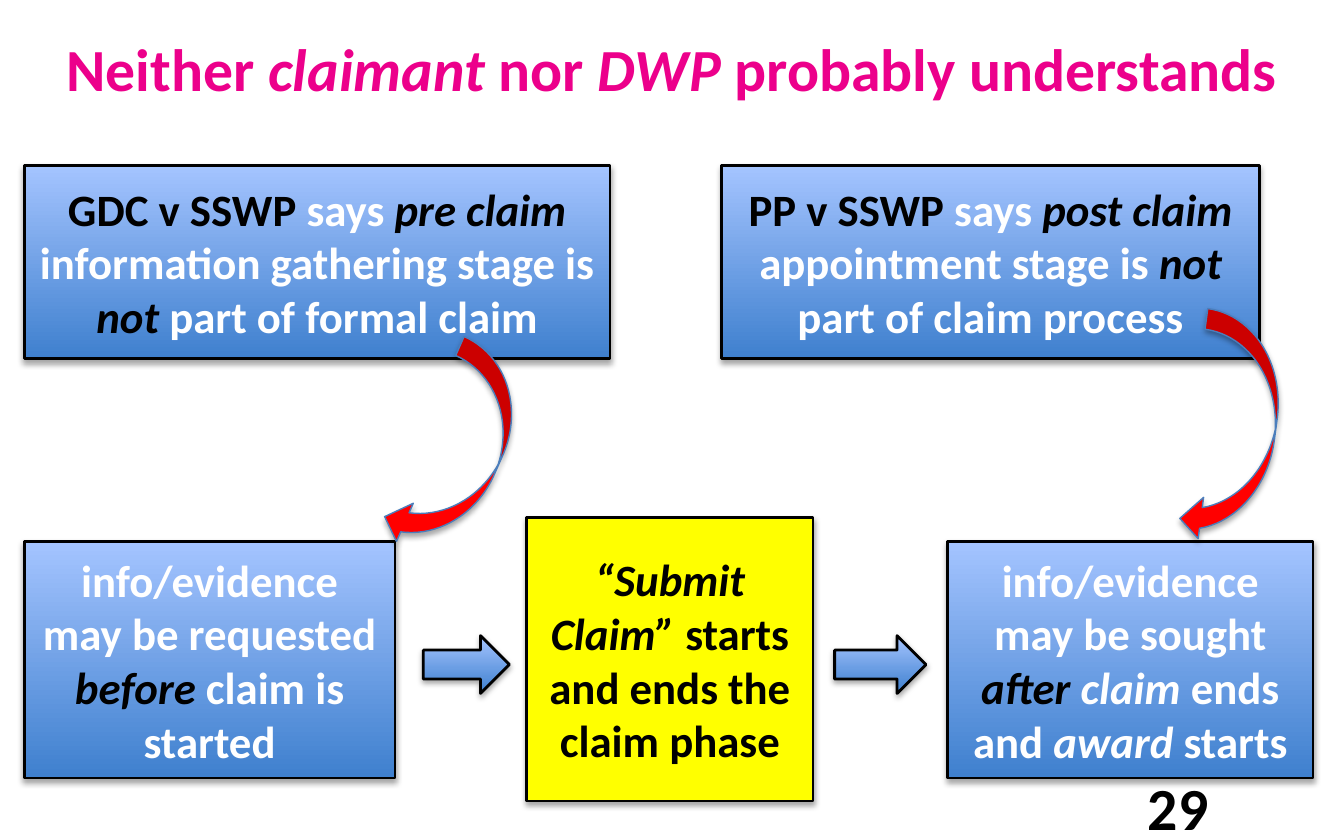
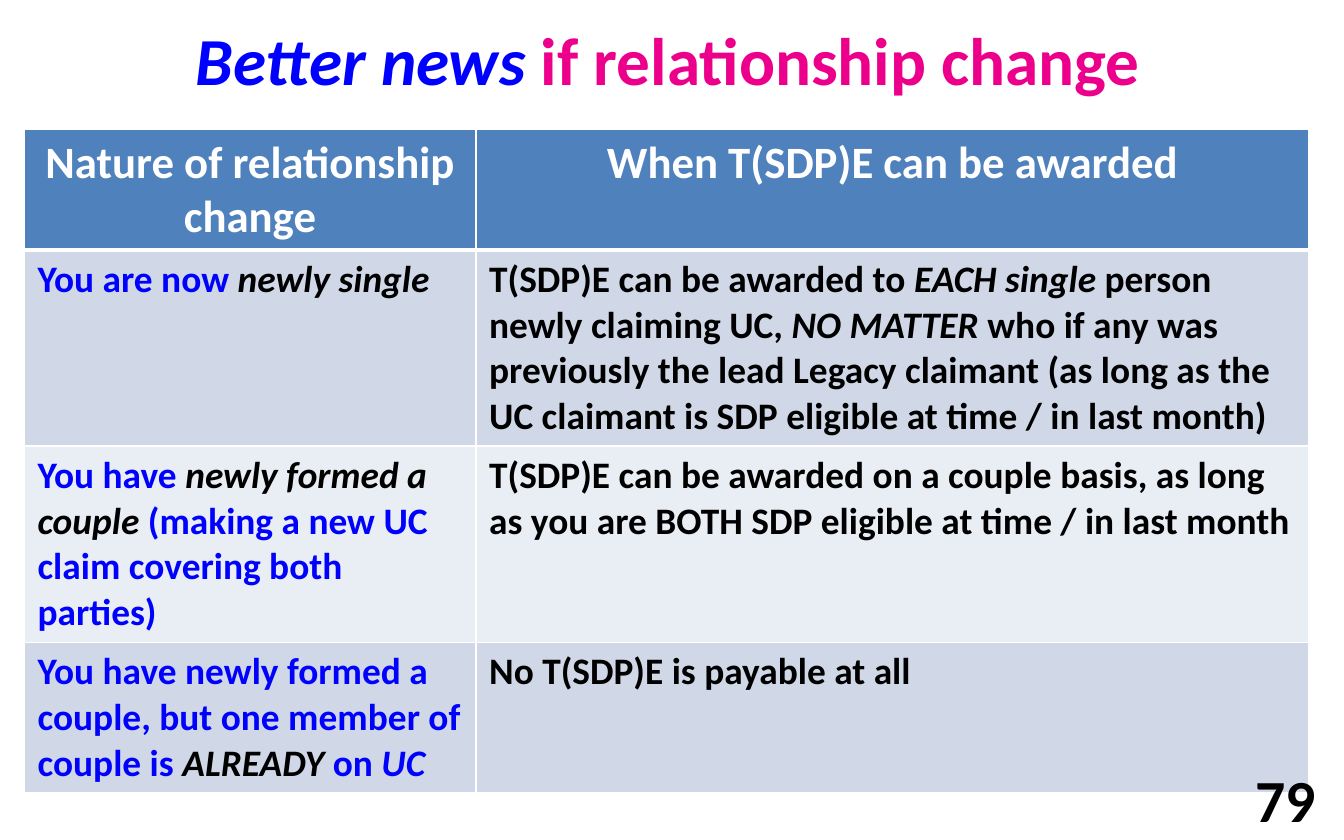
from lxml import etree
from pptx import Presentation
from pptx.dml.color import RGBColor
from pptx.enum.shapes import MSO_SHAPE as Preset
from pptx.enum.text import MSO_ANCHOR as Anchor, PP_ALIGN as Align
from pptx.oxml.ns import qn
from pptx.util import Inches, Pt

COLOURS = {
    "pink": "EC008B",
    "blue": "0000FF",
    "black": "000000",
    "white": "FFFFFF",
    "yellow": "FFFF00",
    "red": "FF0000",
    "arrow edge": "4B7EBC",
    "gradient dark": "3F80CE",
    "gradient light": "A4C4FF",
    "header": "4F81BD",
    "band dark": "D0D8E8",
    "band light": "E9EDF4",
}
FONT = "Calibri"
ITALIC = True


def rgb(name):
    return RGBColor.from_string(COLOURS[name])


def add_colour(parent, name):
    return etree.SubElement(parent, qn("a:srgbClr"), val=COLOURS[name])


class Deck:
    def __init__(self, width, height):
        self.presentation = Presentation()
        self.presentation.slide_width = Inches(width)
        self.presentation.slide_height = Inches(height)
        self.slide = None

    def new_slide(self):
        self.slide = self.presentation.slides.add_slide(self.presentation.slide_layouts[6])

    def fill_text(self, text_frame, paragraphs, size, align=Align.CENTER):
        """Fill a frame with paragraphs, each a list of (text, colour[, italic])."""
        text_frame.word_wrap = True
        for index, runs in enumerate(paragraphs):
            paragraph = text_frame.add_paragraph() if index else text_frame.paragraphs[0]
            paragraph.alignment = align
            for text, colour, *italic in runs:
                run = paragraph.add_run()
                run.text = text
                run.font.name = FONT
                run.font.size = Pt(size)
                run.font.bold = True
                run.font.italic = bool(italic)
                run.font.color.rgb = rgb(colour)

    def text_box(self, place, runs, size, align=Align.CENTER):
        text_frame = self.slide.shapes.add_textbox(*map(Inches, place)).text_frame
        text_frame.vertical_anchor = Anchor.MIDDLE
        self.fill_text(text_frame, [runs], size, align)

    def page_number(self, number, place):
        self.text_box(place, [(str(number), "black")], 32, Align.RIGHT)

    def cast_shadow(self, shape):
        shape.shadow.inherit = False
        effects = shape._element.spPr.find(qn("a:effectLst"))
        shadow = etree.SubElement(
            effects, qn("a:outerShdw"), blurRad=str(Pt(3.1)), dist=str(Pt(1.8)),
            dir="5400000", rotWithShape="0")
        etree.SubElement(add_colour(shadow, "black"), qn("a:alpha"), val="35000")

    def shape(self, preset, place, fill=None, line="black", line_width=1.5, rotation=0):
        """Add a shadowed shape; without a fill colour it gets the blue gradient."""
        shape = self.slide.shapes.add_shape(preset, *map(Inches, place))
        shape.rotation = rotation
        if fill:
            shape.fill.solid()
            shape.fill.fore_color.rgb = rgb(fill)
        else:
            shape.fill.gradient()
            shape.fill.gradient_angle = 90
            for stop, name in zip(shape.fill.gradient_stops, ("gradient dark", "gradient light")):
                stop.color.rgb = rgb(name)
        shape.line.color.rgb = rgb(line)
        shape.line.width = Pt(line_width)
        self.cast_shadow(shape)
        return shape

    def box(self, place, *paragraphs, fill=None):
        text_frame = self.shape(Preset.RECTANGLE, place, fill).text_frame
        text_frame.vertical_anchor = Anchor.MIDDLE
        self.fill_text(text_frame, paragraphs, 24)

    def curved_arrow(self, place, rotation):
        self.shape(Preset.CURVED_LEFT_ARROW, place, "red", "arrow edge", 0.75, rotation)

    def cell_borders(self, cell, top, bottom):
        properties = cell._tc.get_or_add_tcPr()
        for side, width in (("L", 1), ("R", 1), ("T", top), ("B", bottom)):
            line = etree.SubElement(properties, qn("a:ln" + side), w=str(Pt(width)))
            add_colour(etree.SubElement(line, qn("a:solidFill")), "white")

    def table(self, left, top, widths, heights, rows):
        place = map(Inches, (left, top, sum(widths), sum(heights)))
        table = self.slide.shapes.add_table(len(rows), len(widths), *place).table
        for column, width in zip(table.columns, widths):
            column.width = Inches(width)
        for index, (row, height, contents) in enumerate(zip(table.rows, heights, rows)):
            row.height = Inches(height)
            header = index == 0
            fill = "header" if header else "band dark" if index % 2 else "band light"
            for cell, runs in zip(row.cells, contents):
                self.cell_borders(cell, 3 if index == 1 else 1, 3 if header else 1)
                cell.fill.solid()
                cell.fill.fore_color.rgb = rgb(fill)
                self.fill_text(cell.text_frame, [runs], 24 if header else 20,
                               Align.CENTER if header else Align.LEFT)


def claim_stages(deck):
    deck.new_slide()
    deck.text_box((0, 0.18, 10, 0.65), [
        ("Neither ", "pink"), ("claimant", "pink", ITALIC), (" nor ", "pink"),
        ("DWP", "pink", ITALIC), (" probably understands", "pink")], 32)
    deck.page_number(29, (6.76, 5.79, 2.33, 0.43))

    stage_top, stage_height = 4.03, 1.76
    deck.box((0.18, stage_top, 2.76, stage_height),
             [("info/evidence may be requested", "white")],
             [("before", "black", ITALIC), (" claim is started", "white")])
    deck.box((7.05, stage_top, 2.72, stage_height),
             [("info/evidence may be sought", "white")],
             [("after ", "black", ITALIC), ("claim", "white", ITALIC),
              (" ends and ", "white"), ("award ", "white", ITALIC), ("starts", "white")])
    deck.box((3.92, 3.85, 2.13, 2.11),
             [("“Submit Claim” ", "black", ITALIC),
              ("starts and ends the claim phase", "black")], fill="yellow")
    for left, width in ((3.15, 0.64), (6.21, 0.68)):
        deck.shape(Preset.RIGHT_ARROW, (left, 4.73, width, 0.43))

    rulings = (
        (0.18, 4.36, "GDC v SSWP ", "pre claim ",
         "information gathering stage is ", "part of formal claim"),
        (5.37, 4, "PP v SSWP ", "post claim ",
         "appointment stage is ", "part of claim process"),
    )
    for left, width, case, timing, stage, process in rulings:
        deck.box((left, 1.23, width, 1.44), [
            (case, "black"), ("says ", "white"), (timing, "black", ITALIC),
            (stage, "white"), ("not ", "black", ITALIC), (process, "white")])

    deck.curved_arrow((3.1, 2.56, 0.62, 1.62), 23.8)
    deck.curved_arrow((8.87, 2.33, 0.62, 1.73), 7.6)


def relationship_change(deck):
    deck.new_slide()
    deck.text_box((0, 0.14, 9.94, 0.6), [
        ("Better news ", "blue", ITALIC), ("if relationship change", "pink")], 36)
    deck.table(0.18, 0.96, (3.36, 6.2), (0.9, 1.46, 1.46, 1.12), [
        [[("Nature of relationship change", "white")],
         [("When T(SDP)E can be awarded", "white")]],
        [[("You are now ", "blue"), ("newly single", "black", ITALIC)],
         [("T(SDP)E can be awarded to ", "black"), ("EACH single ", "black", ITALIC),
          ("person newly claiming UC, ", "black"), ("NO MATTER ", "black", ITALIC),
          ("who if any was previously the lead Legacy claimant (as long as the "
           "UC claimant is SDP eligible at time / in last month)", "black")]],
        [[("You have ", "blue"), ("newly formed a couple ", "black", ITALIC),
          ("(making a new UC claim covering both parties)", "blue")],
         [("T(SDP)E can be awarded on a couple basis, as long as you are BOTH "
           "SDP eligible at time / in last month", "black")]],
        [[("You have newly formed a couple, but one member of couple is ", "blue"),
          ("ALREADY", "black", ITALIC), (" on", "blue"), (" UC", "blue", ITALIC)],
         [("No T(SDP)E is payable at all", "black")]],
    ])
    deck.page_number(79, (7.56, 5.78, 2.33, 0.33))


def main():
    deck = Deck(10, 6.25)
    claim_stages(deck)
    relationship_change(deck)
    deck.presentation.save("out.pptx")


if __name__ == "__main__":
    main()
